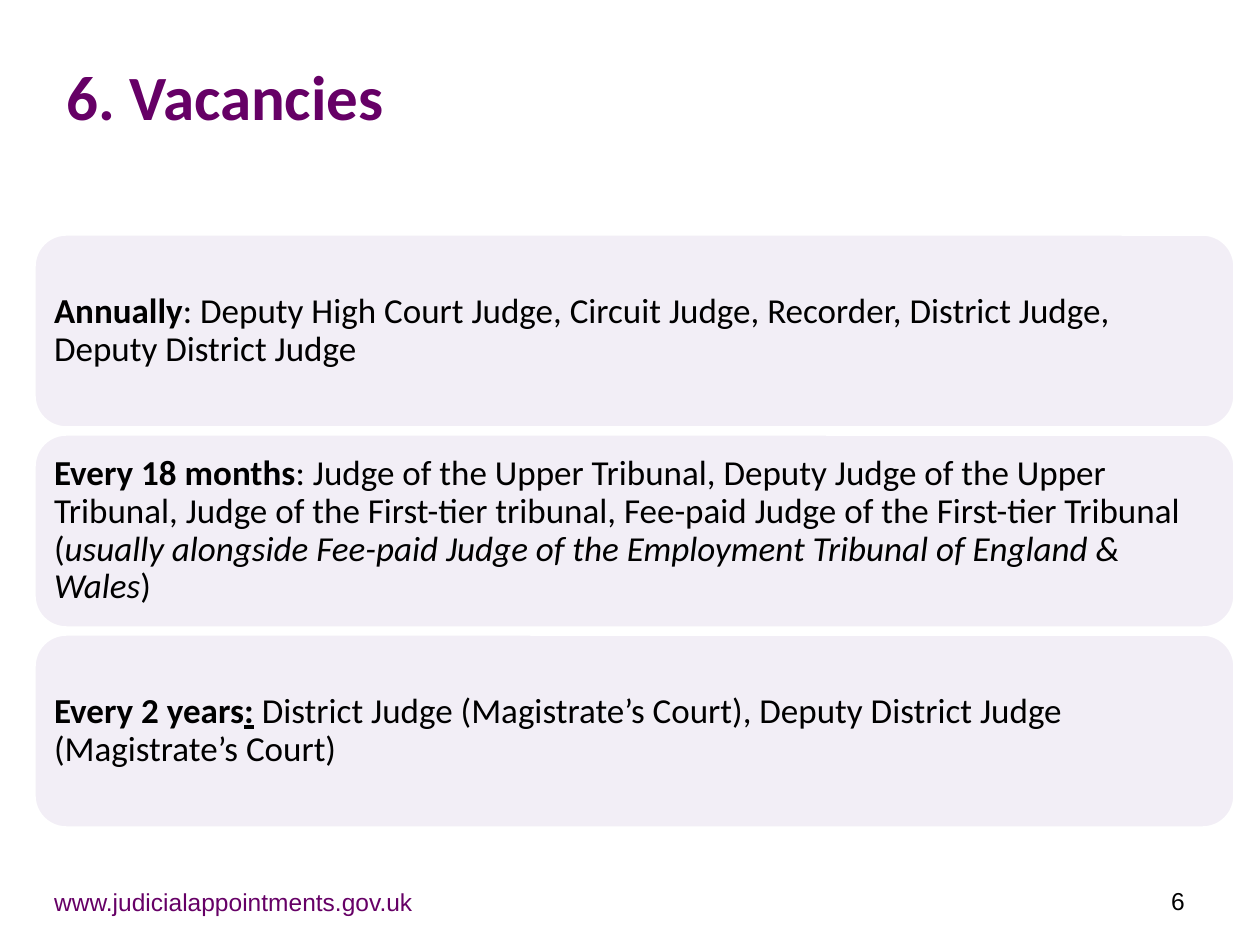
from dataclasses import dataclass
from pptx import Presentation
from pptx.dml.color import RGBColor as RGB
from pptx.enum.shapes import MSO_SHAPE as Kind
from pptx.enum.text import MSO_ANCHOR as Anchor, PP_ALIGN as Align
from pptx.util import Emu, Pt

TITLE = "6. Vacancies"
# Each card is a list of (text, style); style letters: b bold, i italic, u underline
CARDS = [
    [("Annually", "b"),
     (": Deputy High Court Judge, Circuit Judge, Recorder, District Judge, "
      "Deputy District Judge", "")],
    [("Every 18 months", "b"),
     (": Judge of the Upper Tribunal, Deputy Judge of the Upper Tribunal, "
      "Judge of the First-tier tribunal, Fee-paid Judge of the First-tier "
      "Tribunal (", ""),
     ("usually alongside Fee-paid Judge of the Employment Tribunal of "
      "England & Wales", "i"),
     (")", "")],
    [("Every 2 years", "b"), (":", "bu"), (" ", "b"),
     ("District Judge (Magistrate’s Court), Deputy District Judge "
      "(Magistrate’s Court)", "")],
]
SITE = "www.judicialappointments.gov.uk"
PAGE = "6"


@dataclass(frozen=True)
class Theme:
    plum: RGB = RGB(0x66, 0x00, 0x66)
    ink: RGB = RGB(0, 0, 0)
    card: RGB = RGB(0xF2, 0xEE, 0xF6)
    edge: RGB = RGB(0xFF, 0xFF, 0xFF)
    main: str = "Calibri"
    foot: str = "Arial"
    head: int = 36
    body: int = 20
    small: int = 14


T = Theme()
WIDE, HIGH = 1260, 945
LEFT, TOP, CARD_W, CARD_H, STEP = 34, 234, 1201, 194, 200
PAD = 10


def px(n):
    return Emu(round(n * 914400 / 126))


def add_text(slide, box, runs, face, size, color, align=Align.LEFT, pad=None):
    """Add a wrapped, middle-anchored text box and return its paragraph."""
    frame = slide.shapes.add_textbox(*map(px, box)).text_frame
    frame.word_wrap = True
    frame.vertical_anchor = Anchor.MIDDLE
    if pad is not None:
        frame.margin_left = frame.margin_right = px(pad)
        frame.margin_top = frame.margin_bottom = px(pad)
    para = frame.paragraphs[0]
    para.alignment = align
    for text, style in runs:
        run = para.add_run()
        run.text = text
        font = run.font
        font.name, font.size = face, Pt(size)
        font.color.rgb = color
        font.bold = "b" in style
        font.italic = "i" in style
        font.underline = "u" in style
    return para


def add_card(slide, top, runs):
    card = slide.shapes.add_shape(
        Kind.ROUNDED_RECTANGLE, *map(px, (LEFT, top, CARD_W, CARD_H)))
    card.shadow.inherit = False
    card.fill.solid()
    card.fill.fore_color.rgb = T.card
    card.line.color.rgb = T.edge
    card.line.width = Pt(2)
    box = (LEFT + PAD, top + PAD, CARD_W - 2 * PAD, CARD_H - 2 * PAD)
    para = add_text(slide, box, runs, T.main, T.body, T.ink, pad=PAD)
    para.line_spacing = 0.9


def main():
    deck = Presentation()
    deck.slide_width, deck.slide_height = px(WIDE), px(HIGH)
    slide = deck.slides.add_slide(deck.slide_layouts[6])
    add_text(slide, (54, 35, 1167, 120), [(TITLE, "b")],
             T.main, T.head, T.plum)
    for i, runs in enumerate(CARDS):
        add_card(slide, TOP + i * STEP, runs)
    add_text(slide, (LEFT, 869, 399, 66), [(SITE, "")],
             T.foot, T.small, T.plum, Align.CENTER)
    add_text(slide, (903, 876, 294, 50), [(PAGE, "")],
             T.foot, T.small, T.ink, Align.RIGHT)
    deck.save("out.pptx")


if __name__ == "__main__":
    main()
